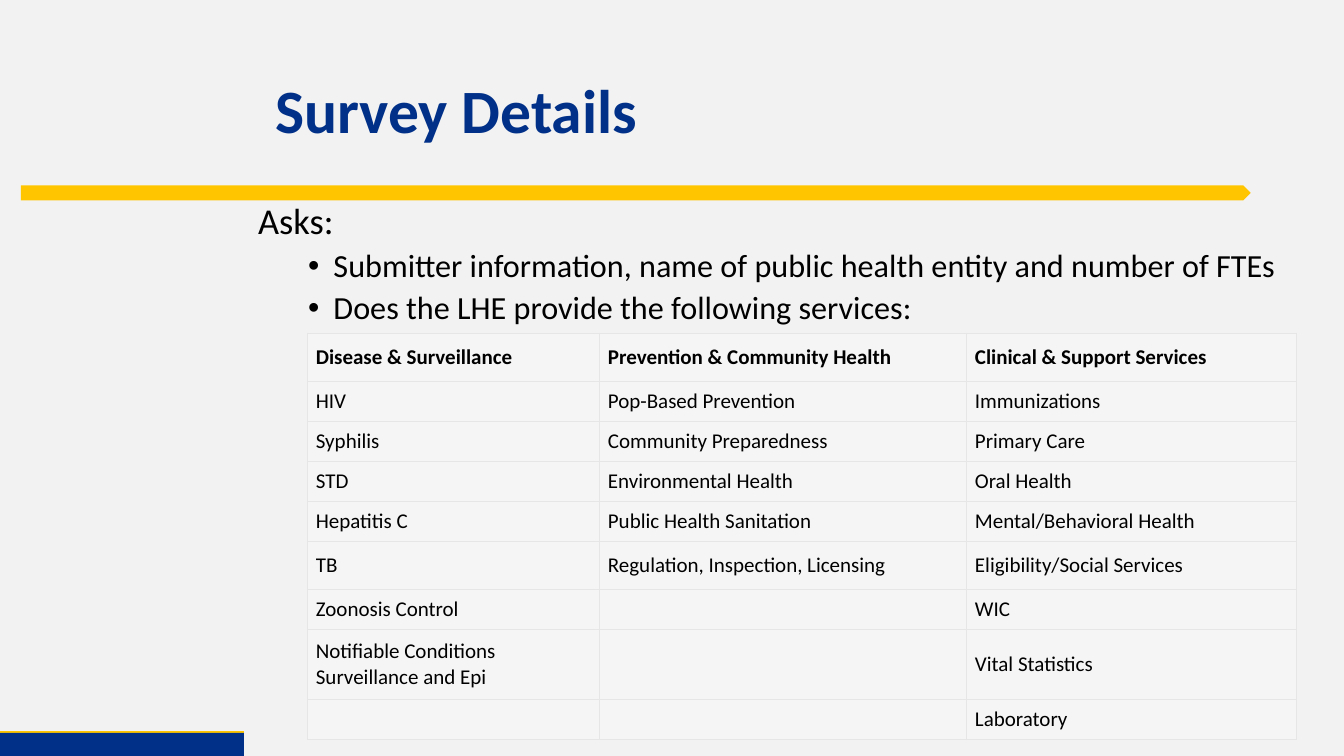
from dataclasses import dataclass

from lxml import etree
from pptx import Presentation
from pptx.dml.color import RGBColor
from pptx.enum.shapes import MSO_CONNECTOR, MSO_SHAPE
from pptx.enum.text import MSO_ANCHOR, MSO_AUTO_SIZE, PP_ALIGN
from pptx.oxml.ns import qn
from pptx.util import Cm, Pt

MIDDLE, TOP = MSO_ANCHOR.MIDDLE, MSO_ANCHOR.TOP
LEFT = PP_ALIGN.LEFT
NO_FIT = MSO_AUTO_SIZE.NONE
STRAIGHT = MSO_CONNECTOR.STRAIGHT
PENTAGON, RECTANGLE = MSO_SHAPE.PENTAGON, MSO_SHAPE.RECTANGLE

FONT = "Calibri"
NAVY, GOLD, BLACK = "003087", "FFC600", "000000"
PAPER, CELL_FILL, CELL_BORDER = "F2F2F2", "F5F5F5", "E6E6E6"


@dataclass
class Box:
    left: float
    top: float
    width: float
    height: float

    def lengths(self) -> list:
        return [Cm(v) for v in (self.left, self.top, self.width, self.height)]


@dataclass
class Bar:
    preset: int
    box: Box
    color: str


@dataclass
class Item:
    text: str
    size: float
    space_before: float = 0
    bullet: bool = False


RULE = Bar(PENTAGON, Box(0.53, 4.67, 30.99, 0.38), GOLD)
FOOTER = Bar(RECTANGLE, Box(0, 18.47, 6.15, 0.58), NAVY)
TITLE_BOX = Box(6.68, 1.02, 24.87, 3.68)
BODY_BOX = Box(6.25, 5, 26.82, 14.05)

ITEMS = [
    Item("Asks:", 26),
    Item("Submitter information, name of public health entity and number of FTEs", 23, 5, True),
    Item("Does the LHE provide the following services:", 23, 5, True),
]

SERVICES = {
    "Disease & Surveillance": [
        "HIV", "Syphilis", "STD", "Hepatitis C", "TB", "Zoonosis Control",
        "Notifiable Conditions Surveillance and Epi"],
    "Prevention & Community Health": [
        "Pop-Based Prevention", "Community Preparedness", "Environmental Health",
        "Public Health Sanitation", "Regulation, Inspection, Licensing"],
    "Clinical & Support Services": [
        "Immunizations", "Primary Care", "Oral Health", "Mental/Behavioral Health",
        "Eligibility/Social Services", "WIC", "Vital Statistics", "Laboratory"],
}
COL_WIDTHS = [7.36, 9.25, 8.31]
ROW_HEIGHTS = [1.21, 1.01, 1.01, 1.01, 1.01, 1.21, 1.01, 1.74, 1.01]
TABLE_BOX = Box(7.75, 8.4, sum(COL_WIDTHS), sum(ROW_HEIGHTS))


def rgb(value: str) -> RGBColor:
    return RGBColor.from_string(value)


def add_run(p, text: str, size: float, color: str = BLACK, bold: bool = False) -> None:
    r = p.add_run()
    r.text = text
    r.font.name, r.font.size, r.font.bold = FONT, Pt(size), bold
    r.font.color.rgb = rgb(color)


def add_bar(slide, bar: Bar) -> None:
    sp = slide.shapes.add_shape(bar.preset, *bar.box.lengths())
    sp.shadow.inherit = False
    sp.fill.solid()
    sp.fill.fore_color.rgb = rgb(bar.color)
    sp.line.fill.background()


def add_footer_line(slide) -> None:
    box = FOOTER.box
    line = slide.shapes.add_connector(
        STRAIGHT, Cm(box.left), Cm(box.top), Cm(box.left + box.width), Cm(box.top))
    line.line.color.rgb = rgb(GOLD)
    line.line.width = Pt(3)
    etree.SubElement(line._element.spPr, qn("a:effectLst"))


def place(sp, box: Box, anchor: MSO_ANCHOR):
    """Move a placeholder and return its text frame."""
    sp.left, sp.top, sp.width, sp.height = box.lengths()
    tf = sp.text_frame
    tf.auto_size, tf.vertical_anchor, tf.word_wrap = NO_FIT, anchor, True
    return tf


def fill_title(sp) -> None:
    p = place(sp, TITLE_BOX, MIDDLE).paragraphs[0]
    p.alignment, p.line_spacing = LEFT, 0.9
    add_run(p, "Survey Details", 44, NAVY, True)


def fill_body(sp) -> None:
    tf = place(sp, BODY_BOX, TOP)
    for i, item in enumerate(ITEMS):
        p = tf.add_paragraph() if i else tf.paragraphs[0]
        pPr = p._p.get_or_add_pPr()
        if item.bullet:
            p.level = 1
            etree.SubElement(pPr, qn("a:buFont"), typeface="Arial")
            etree.SubElement(pPr, qn("a:buChar"), char="•")
        else:
            etree.SubElement(pPr, qn("a:buNone"))
        pPr.set("marL", str(Cm(1.9 if item.bullet else 0)))
        pPr.set("indent", str(Cm(-0.64 if item.bullet else 0)))
        p.line_spacing, p.space_before = 0.9, Pt(item.space_before)
        add_run(p, item.text, item.size)


def set_borders(cell) -> None:
    tcPr = cell._tc.get_or_add_tcPr()
    for i, side in enumerate(("lnL", "lnR", "lnT", "lnB")):
        ln = etree.Element(qn(f"a:{side}"), w=str(Pt(0.6)))
        fill = etree.SubElement(ln, qn("a:solidFill"))
        etree.SubElement(fill, qn("a:srgbClr"), val=CELL_BORDER)
        tcPr.insert(i, ln)


def add_services_table(slide) -> None:
    table = slide.shapes.add_table(
        len(ROW_HEIGHTS), len(COL_WIDTHS), *TABLE_BOX.lengths()).table
    table.first_row = table.horz_banding = False
    for column, width in zip(table.columns, COL_WIDTHS):
        column.width = Cm(width)
    for row, height in zip(table.rows, ROW_HEIGHTS):
        row.height = Cm(height)
    for cell in table.iter_cells():
        cell.fill.solid()
        cell.fill.fore_color.rgb = rgb(CELL_FILL)
        cell.vertical_anchor = MIDDLE
        cell.margin_left = cell.margin_right = Cm(0.21)
        cell.margin_top = cell.margin_bottom = Cm(0.11)
        set_borders(cell)
    for c, (heading, services) in enumerate(SERVICES.items()):
        for r, text in enumerate([heading, *services]):
            p = table.cell(r, c).text_frame.paragraphs[0]
            add_run(p, text, 15, bold=r == 0)


def main() -> None:
    prs = Presentation()
    prs.slide_width, prs.slide_height = Cm(33.87), Cm(19.05)
    slide = prs.slides.add_slide(prs.slide_layouts[1])
    slide.background.fill.solid()
    slide.background.fill.fore_color.rgb = rgb(PAPER)
    add_bar(slide, RULE)
    add_footer_line(slide)
    add_bar(slide, FOOTER)
    fill_title(slide.shapes.title)
    fill_body(slide.placeholders[1])
    add_services_table(slide)
    prs.save("out.pptx")


if __name__ == "__main__":
    main()
